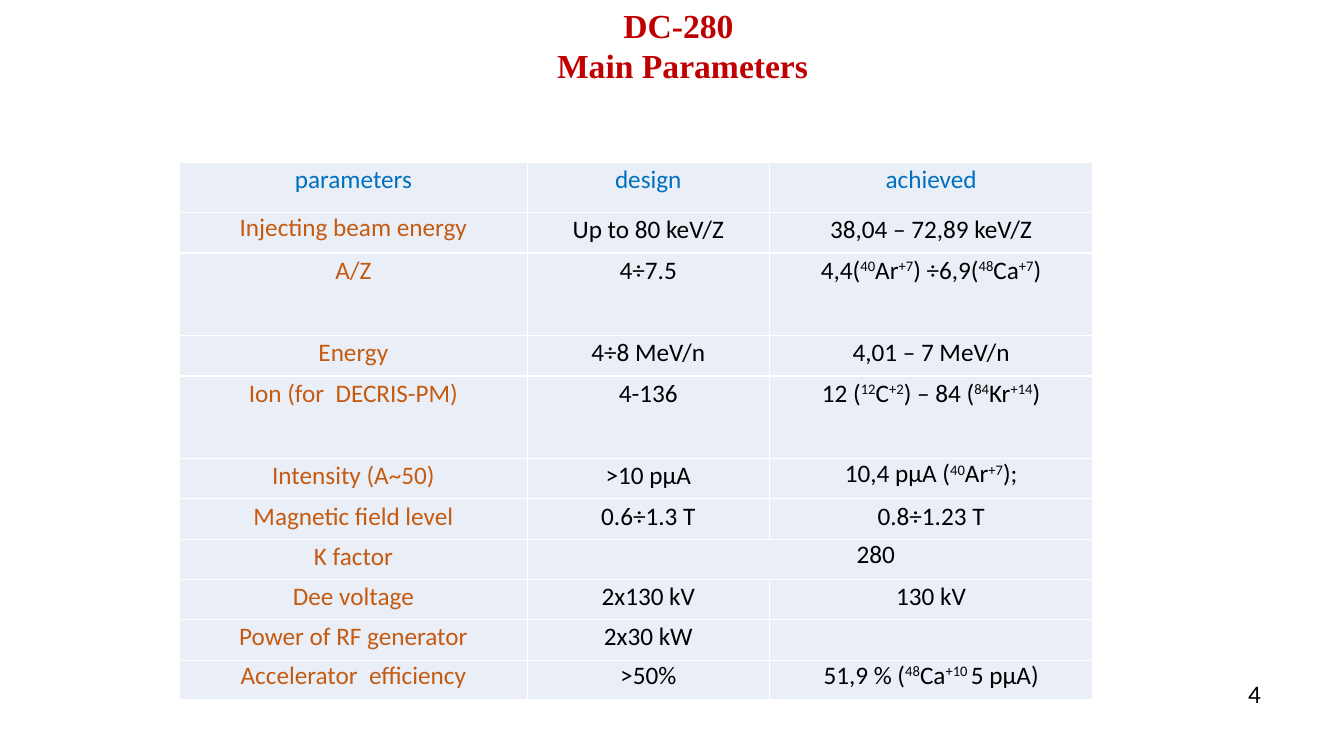
"""Build the DC-280 main parameters slide."""
from dataclasses import dataclass

from pptx import Presentation
from pptx.dml.color import RGBColor
from pptx.enum.text import MSO_ANCHOR, MSO_AUTO_SIZE, PP_ALIGN
from pptx.util import Inches, Pt

COLORS = {
    "title": "C00000",
    "header": "0070C0",
    "parameter": "C55A11",
    "value": "000000",
    "cell": "EAEFF7",
}
COLUMN_WIDTHS = (3.45, 2.4, 3.21)
SIDE_INSET = 0.07
K_FACTOR_INDENT = 1.3


@dataclass(frozen=True)
class Entry:
    """Cell text, with superscripts between bars, and its spacing."""
    text: str
    line: float = 1.07
    before: float = 0
    after: float = 0
    indent: float = 0


@dataclass(frozen=True)
class ParameterRow:
    """One table row; without an achieved entry the design cell spans both."""
    parameter: Entry
    design: Entry
    achieved: Entry | None
    height: float = 0.4


ROWS = (
    ParameterRow(Entry("parameters"), Entry("design"), Entry("achieved"), 0.5),
    ParameterRow(Entry("Injecting beam energy", 1), Entry("Up to 80 keV/Z"),
                 Entry("38,04 – 72,89 keV/Z")),
    ParameterRow(Entry("A/Z"), Entry("4÷7.5"),
                 Entry("4,4(|40|Ar|+7|) ÷6,9(|48|Ca|+7|)"), 0.82),
    ParameterRow(Entry("Energy"), Entry("4÷8 MeV/n"), Entry("4,01 – 7 MeV/n")),
    ParameterRow(Entry("Ion (for  DECRIS-PM)"), Entry("4-136"),
                 Entry("12 (|12|C|+2|) – 84 (|84|Kr|+14|)"), 0.82),
    ParameterRow(Entry("Intensity (A~50)"), Entry(">10 pµA"),
                 Entry("10,4 pµA (|40|Ar|+7|);", 1)),
    ParameterRow(Entry("Magnetic field level"), Entry("0.6÷1.3 T"), Entry("0.8÷1.23 T")),
    ParameterRow(Entry("K factor"), Entry("280", 1, 1, 1, K_FACTOR_INDENT), None),
    ParameterRow(Entry("Dee voltage"), Entry("2x130 kV"), Entry("130 kV")),
    ParameterRow(Entry("Power of RF generator"), Entry("2x30 kW"), Entry("")),
    ParameterRow(Entry("Accelerator  efficiency", 1, 3, 1), Entry(">50%", 1, 1, 1),
                 Entry("51,9 % (|48|Ca|+10 |5 pµA)", 1, 1, 1), 0.39),
)


def add_run(paragraph, text: str, color: str, size: float = 18,
            font: str = "Calibri", bold: bool = False, raised: bool = False) -> None:
    """Append one formatted run."""
    run = paragraph.add_run()
    run.text = text
    run.font.name = font
    run.font.size = Pt(size)
    run.font.bold = bold
    run.font.color.rgb = RGBColor.from_string(COLORS[color])
    if raised:
        run.font._element.set("baseline", "30000")


def fill_cell(cell, entry: Entry, color: str) -> None:
    """Fill a cell and write its entry."""
    cell.fill.solid()
    cell.fill.fore_color.rgb = RGBColor.from_string(COLORS["cell"])
    cell.margin_left = Inches(SIDE_INSET + entry.indent)
    cell.margin_right = Inches(SIDE_INSET)
    cell.margin_top = cell.margin_bottom = Inches(0)
    paragraph = cell.text_frame.paragraphs[0]
    paragraph.alignment = PP_ALIGN.CENTER
    paragraph.line_spacing = entry.line
    paragraph.space_before = Pt(entry.before)
    paragraph.space_after = Pt(entry.after)
    for position, part in enumerate(entry.text.split("|")):
        if part:
            add_run(paragraph, part, color, raised=position % 2 == 1)


def add_title(slide) -> None:
    """Place the two-line title."""
    title = slide.shapes.title
    title.left, title.top = Inches(2.41), Inches(0)
    title.width, title.height = Inches(8.72), Inches(0.91)
    frame = title.text_frame
    frame.auto_size = MSO_AUTO_SIZE.NONE
    frame.vertical_anchor = MSO_ANCHOR.TOP
    for position, line in enumerate(("DC-280 ", "Main Parameters")):
        paragraph = frame.add_paragraph() if position else frame.paragraphs[0]
        paragraph.alignment = PP_ALIGN.CENTER
        add_run(paragraph, line, "title", 24, "Times New Roman", True)


def add_parameters(slide) -> None:
    """Draw the parameter table."""
    parameters = slide.shapes.add_table(
        len(ROWS), len(COLUMN_WIDTHS), Inches(1.78), Inches(1.61),
        Inches(sum(COLUMN_WIDTHS)), Inches(sum(row.height for row in ROWS))).table
    parameters.first_row = parameters.horz_banding = False
    for column, width in zip(parameters.columns, COLUMN_WIDTHS):
        column.width = Inches(width)
    for index, row in enumerate(ROWS):
        parameters.rows[index].height = Inches(row.height)
        if row.achieved is None:
            parameters.cell(index, 1).merge(parameters.cell(index, 2))
        for column, entry in enumerate((row.parameter, row.design, row.achieved)):
            if entry is not None:
                color = "value" if column else "parameter"
                fill_cell(parameters.cell(index, column), entry, color if index else "header")


def add_page_number(slide) -> None:
    """Write the page number."""
    frame = slide.shapes.add_textbox(
        Inches(12.28), Inches(6.68), Inches(0.33), Inches(0.4)).text_frame
    frame.word_wrap = False
    add_run(frame.paragraphs[0], "4", "value")


def main() -> None:
    """Build and save the slide."""
    presentation = Presentation()
    presentation.slide_width, presentation.slide_height = Inches(13.33), Inches(7.5)
    slide = presentation.slides.add_slide(presentation.slide_layouts[5])
    add_title(slide)
    add_parameters(slide)
    add_page_number(slide)
    presentation.save("out.pptx")


if __name__ == "__main__":
    main()
